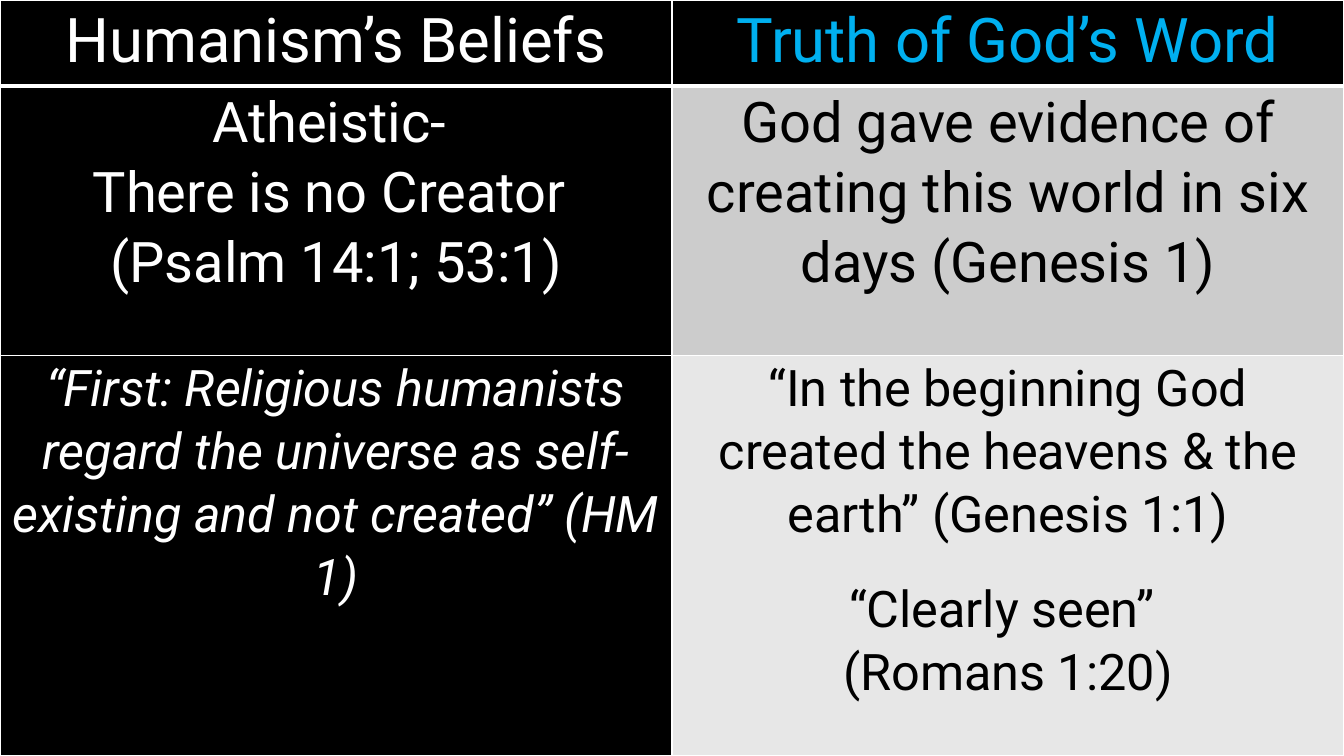
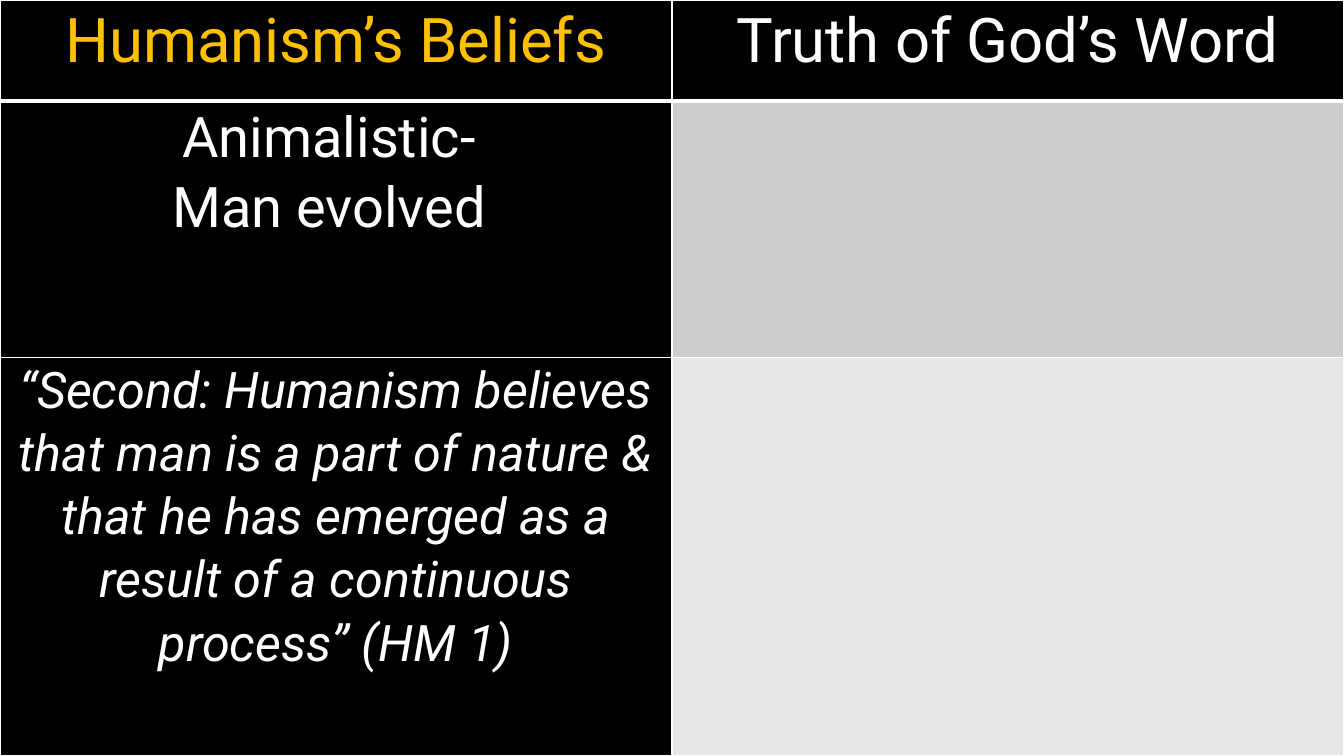
from lxml.etree import SubElement
from pptx import Presentation
from pptx.dml.color import RGBColor
from pptx.enum.text import PP_ALIGN
from pptx.oxml.ns import qn
from pptx.util import Inches, Pt

SLIDE_WIDTH, SLIDE_HEIGHT = 13.33, 7.5
FONT = "Roboto"
LINE_SPACING = 1.07
PARAGRAPH_GAP = 22.6
BLACK, WHITE = "000000", "FFFFFF"
BLUE, GOLD = "00B0F0", "FFC000"
LEFT_FILLS = (BLACK, BLACK, BLACK)
RIGHT_FILLS = (BLACK, "CCCCCC", "E7E7E7")
ROW_SIZES = (44, 40, 36)
QUOTE_ROW = 2
THIN, THICK = 1, 3
HEADINGS = ("Humanism’s Beliefs", "Truth of God’s Word")


def rgb(color):
    return RGBColor.from_string(color)


def set_borders(cell, row):
    """Draw white borders, with a thick rule under the heading row."""
    widths = {
        "a:lnL": THIN,
        "a:lnR": THIN,
        "a:lnT": THICK if row == 1 else THIN,
        "a:lnB": THICK if row == 0 else THIN,
    }
    properties = cell._tc.get_or_add_tcPr()
    for tag, width in widths.items():
        line = SubElement(properties, qn(tag), w=str(Pt(width)))
        fill = SubElement(line, qn("a:solidFill"))
        SubElement(fill, qn("a:srgbClr"), val=WHITE)


def style_cell(cell, row, fill):
    cell.margin_left = cell.margin_right = Inches(0.07)
    cell.margin_top = cell.margin_bottom = 0
    set_borders(cell, row)
    cell.fill.solid()
    cell.fill.fore_color.rgb = rgb(fill)


def write_cell(cell, groups, size, color, italic):
    """Write groups of paragraphs, with a gap before each later group."""
    lines = [(text, group > 0 and index == 0)
             for group, texts in enumerate(groups)
             for index, text in enumerate(texts)]
    text_frame = cell.text_frame
    text_frame.text = "\n".join(text for text, _ in lines)
    for paragraph, (_, starts_group) in zip(text_frame.paragraphs, lines):
        paragraph.alignment = PP_ALIGN.CENTER
        paragraph.line_spacing = LINE_SPACING
        if starts_group:
            paragraph.space_before = Pt(PARAGRAPH_GAP)
        for run in paragraph.runs:
            run.font.name = FONT
            run.font.size = Pt(size)
            run.font.italic = italic
            run.font.color.rgb = rgb(color)


def add_comparison(presentation, heading_colors, row_heights, beliefs, truths):
    """Add a slide with a full-page table; the last row takes the rest."""
    slide = presentation.slides.add_slide(presentation.slide_layouts[6])
    background = slide.background.fill
    background.solid()
    background.fore_color.rgb = rgb(BLACK)

    table = slide.shapes.add_table(
        3, 2, 0, 0, Inches(SLIDE_WIDTH), Inches(SLIDE_HEIGHT)).table
    table.first_row = table.horz_banding = False
    heights = (*row_heights, SLIDE_HEIGHT - sum(row_heights))
    for table_row, height in zip(table.rows, heights):
        table_row.height = Inches(height)

    columns = zip(HEADINGS, heading_colors, (beliefs, truths),
                  (LEFT_FILLS, RIGHT_FILLS), (WHITE, BLACK))
    for column, (heading, heading_color, body, fills, color) in enumerate(columns):
        for row, groups in enumerate(([[heading]], *body)):
            cell = table.cell(row, column)
            style_cell(cell, row, fills[row])
            if groups:
                write_cell(cell, groups, ROW_SIZES[row],
                           heading_color if row == 0 else color,
                           italic=row == QUOTE_ROW and column == 0)


def main():
    presentation = Presentation()
    presentation.slide_width = Inches(SLIDE_WIDTH)
    presentation.slide_height = Inches(SLIDE_HEIGHT)

    add_comparison(
        presentation, (WHITE, BLUE), (0.85, 2.68),
        beliefs=(
            [["Atheistic- ", "There is no Creator ", "(Psalm 14:1; 53:1)"]],
            [["“First: Religious humanists regard the universe as "
              "self-existing and not created” (HM 1)"]],
        ),
        truths=(
            [["God gave evidence of creating this world in six days (Genesis 1)"]],
            [["“In the beginning God created the heavens & the earth” (Genesis 1:1)"],
             ["“Clearly seen” ", "(Romans 1:20)"]],
        ),
    )
    add_comparison(
        presentation, (GOLD, WHITE), (1, 2.55),
        beliefs=(
            [["Animalistic- ", "Man evolved "]],
            [["“Second: Humanism believes that man is a part of nature & that "
              "he has emerged as a result of a continuous process” (HM 1)"]],
        ),
        truths=([], []),
    )
    presentation.save("out.pptx")


if __name__ == "__main__":
    main()
